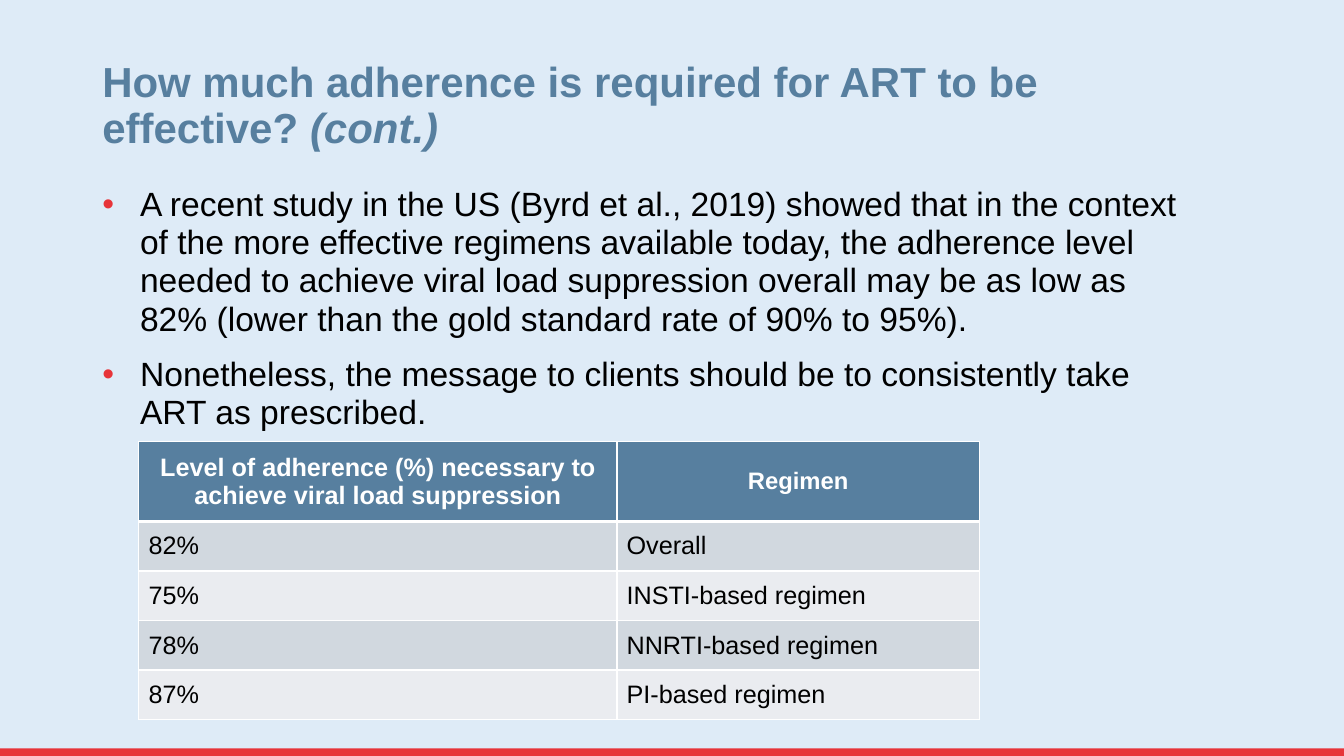
from lxml.etree import SubElement
from pptx import Presentation
from pptx.dml.color import RGBColor
from pptx.enum.shapes import MSO_SHAPE
from pptx.enum.text import MSO_ANCHOR, PP_ALIGN
from pptx.oxml.ns import qn
from pptx.util import Pt

# Content
TITLE = [("How much adherence is required for ART to be effective? ", False),
         ("(cont.)", True)]
POINTS = [
    "A recent study in the US (Byrd et al., 2019) showed that in the context of "
    "the more effective regimens available today, the adherence level needed to "
    "achieve viral load suppression overall may be as low as 82% (lower than the "
    "gold standard rate of 90% to 95%).",
    "Nonetheless, the message to clients should be to consistently take ART as "
    "prescribed.",
]
ROWS = [
    ("Level of adherence (%) necessary to achieve viral load suppression", "Regimen"),
    ("82%", "Overall"),
    ("75%", "INSTI-based regimen"),
    ("78%", "NNRTI-based regimen"),
    ("87%", "PI-based regimen"),
]

# Format values
WIDE, HIGH, BAR = 960, 540, 5.5
BLUE, RED, SKY, WHITE, BLACK = "577F9F", "E73439", "DEEBF7", "FFFFFF", "000000"
BANDS = ["D1D8DF", "EAECF0"]
COLS = [341.5, 259]
HEAD, ROW, PAD = 55.2, 34.5, 6.9
HANG = 27


def color(code):
    return RGBColor.from_string(code)


def apply(item, values):
    for name, value in values.items():
        setattr(item, name, value)


def write(par, text, size, code, **more):
    run = par.add_run()
    run.text = text
    apply(run.font, {"name": "Arial", "size": Pt(size), **more})
    run.font.color.rgb = color(code)


def band(slide, top, height, code):
    shape = slide.shapes.add_shape(
        MSO_SHAPE.RECTANGLE, 0, Pt(top), Pt(WIDE), Pt(height))
    shape.shadow.inherit = False
    shape.fill.solid()
    shape.fill.fore_color.rgb = color(code)
    shape.line.fill.background()


def box(slide, *place, anchor):
    frame = slide.shapes.add_textbox(*map(Pt, place)).text_frame
    apply(frame, {"word_wrap": True, "vertical_anchor": anchor})
    return frame


def bullet(par):
    props = par._p.get_or_add_pPr()
    props.set("marL", str(Pt(HANG)))
    props.set("indent", str(-Pt(HANG)))
    tint = SubElement(props, qn("a:buClr"))
    SubElement(tint, qn("a:srgbClr"), val=RED)
    SubElement(props, qn("a:buFont"), typeface="Arial")
    SubElement(props, qn("a:buChar"), char="•")


def border(cell, widths):
    props = cell._tc.get_or_add_tcPr()
    for spot, (side, width) in enumerate(widths.items()):
        line = SubElement(props, qn("a:ln" + side), w=str(Pt(width)))
        props.insert(spot, line)
        fill = SubElement(line, qn("a:solidFill"))
        SubElement(fill, qn("a:srgbClr"), val=WHITE)


def main():
    deck = Presentation()
    apply(deck, {"slide_width": Pt(WIDE), "slide_height": Pt(HIGH)})
    slide = deck.slides.add_slide(deck.slide_layouts[6])

    # Backdrop and foot bar
    band(slide, 0, HIGH, SKY)
    band(slide, HIGH - BAR, BAR, RED)

    # Title
    par = box(slide, 66, 49.7, 828, 62.6, anchor=MSO_ANCHOR.BOTTOM).paragraphs[0]
    par.line_spacing = 0.9
    for text, slant in TITLE:
        write(par, text, 30, BLUE, bold=True, italic=slant)

    # Bullet points
    frame = box(slide, 66, 129, 786, 388, anchor=MSO_ANCHOR.TOP)
    for i, text in enumerate(POINTS):
        par = frame.add_paragraph() if i else frame.paragraphs[0]
        apply(par, {"line_spacing": 0.95, "space_before": Pt(12)})
        bullet(par)
        write(par, text, 24, BLACK)

    # Table
    tall = HEAD + ROW * (len(ROWS) - 1)
    place = map(Pt, (99.2, 315.4, sum(COLS), tall))
    table = slide.shapes.add_table(len(ROWS), len(COLS), *place).table
    for col, width in zip(table.columns, COLS):
        col.width = Pt(width)
    sides = ("left", "right", "top", "bottom")
    for r, texts in enumerate(ROWS):
        table.rows[r].height = Pt(ROW if r else HEAD)
        for c, text in enumerate(texts):
            cell = table.cell(r, c)
            apply(cell, {"margin_" + side: Pt(PAD) for side in sides})
            cell.vertical_anchor = MSO_ANCHOR.MIDDLE
            cell.fill.solid()
            cell.fill.fore_color.rgb = color(BANDS[(r - 1) % 2] if r else BLUE)
            border(cell, {"L": 1, "R": 1, "T": 3 if r == 1 else 1,
                          "B": 1 if r else 3})
            par = cell.text_frame.paragraphs[0]
            par.alignment = PP_ALIGN.LEFT if r else PP_ALIGN.CENTER
            size = 17 if (r, c) == (0, 1) else 18
            write(par, text, size, BLACK if r else WHITE, bold=not r)

    deck.save("out.pptx")


if __name__ == "__main__":
    main()
